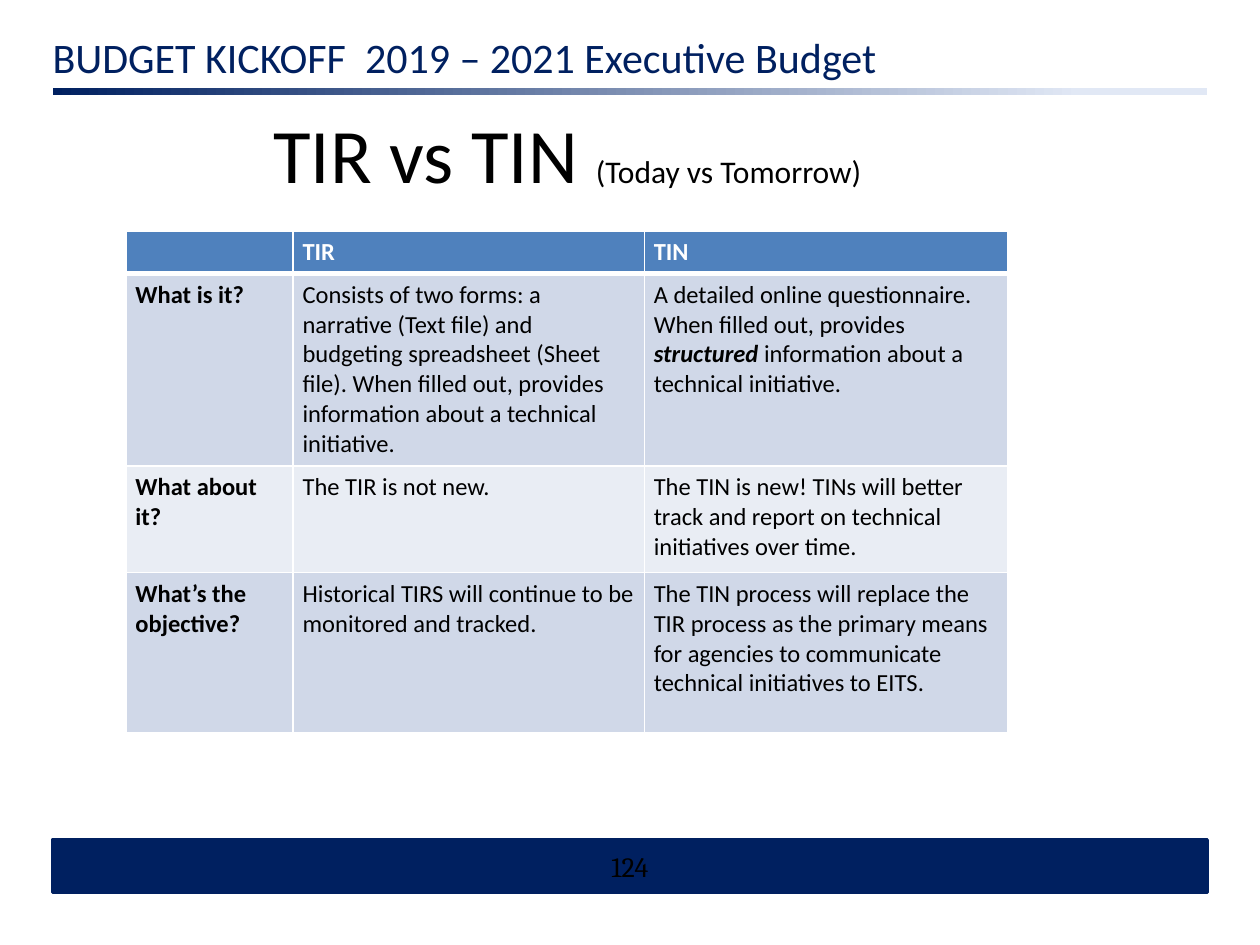
from dataclasses import dataclass

from lxml import etree
from pptx import Presentation
from pptx import util as u
from pptx.dml.color import RGBColor
from pptx.enum import shapes, text
from pptx.oxml.ns import qn


@dataclass(frozen=True)
class Theme:
    font: str = "Calibri"
    number_font: str = "Cambria"
    navy: str = "002060"
    pale: str = "E1E8F5"
    header: str = "4F81BD"
    bands: tuple = ("D0D8E8", "E9EDF4")
    white: str = "FFFFFF"
    black: str = "000000"
    banner_size: int = 24
    title_size: int = 44
    small_size: int = 18
    number_size: int = 16
    table_size: int = 14


class SlideBuilder:
    def __init__(self, slide, theme):
        self.slide = slide
        self.theme = theme

    def add_run(self, paragraph, wording, size, color, font=None, bold=False, italic=False):
        run = paragraph.add_run()
        run.text = wording
        run.font.name = font or self.theme.font
        run.font.size = u.Pt(size)
        run.font.bold = bold
        run.font.italic = italic
        run.font.color.rgb = RGBColor.from_string(color)

    def bar(self, left, top, width, height):
        bar = self.slide.shapes.add_shape(
            shapes.MSO_SHAPE.RECTANGLE, u.Cm(left), u.Cm(top), u.Cm(width), u.Cm(height))
        bar.shadow.inherit = False
        return bar

    def solid_bar(self, *box):
        bar = self.bar(*box)
        navy = RGBColor.from_string(self.theme.navy)
        bar.fill.solid()
        bar.fill.fore_color.rgb = navy
        bar.line.color.rgb = navy
        bar.line.width = u.Pt(2)
        return bar

    def fading_bar(self, *box):
        bar = self.bar(*box)
        bar.line.fill.background()
        bar.fill.gradient()
        bar.fill.gradient_angle = 0
        fade = ((0, self.theme.navy), (0.89, self.theme.pale))
        for stop, (position, color) in zip(bar.fill.gradient_stops, fade):
            stop.position = position
            stop.color.rgb = RGBColor.from_string(color)

    def set_line(self, shape, runs, align):
        """Fill a shape with one vertically centred line of (wording, style) runs."""
        frame = shape.text_frame
        frame.word_wrap = True
        frame.vertical_anchor = text.MSO_ANCHOR.MIDDLE
        line = frame.paragraphs[0]
        line.alignment = align
        for wording, style in runs:
            self.add_run(line, wording, **style)

    def text_line(self, left, top, width, height, runs, align=text.PP_ALIGN.LEFT):
        box = self.slide.shapes.add_textbox(u.Cm(left), u.Cm(top), u.Cm(width), u.Cm(height))
        self.set_line(box, runs, align)

    def border(self, cell, side, width):
        line = etree.SubElement(cell._tc.get_or_add_tcPr(), qn(f"a:ln{side}"), w=str(u.Pt(width)))
        fill = etree.SubElement(line, qn("a:solidFill"))
        etree.SubElement(fill, qn("a:srgbClr"), val=self.theme.white)

    def cell(self, cell, runs, row, column):
        theme = self.theme
        cell.margin_left = cell.margin_right = u.Cm(0.19)
        cell.margin_top = cell.margin_bottom = u.Cm(0.13)
        thick_below_header = {"T": 3 if row == 1 else 1, "B": 3 if row == 0 else 1}
        for side in "LRTB":
            self.border(cell, side, thick_below_header.get(side, 1))
        cell.fill.solid()
        cell.fill.fore_color.rgb = RGBColor.from_string(
            theme.bands[(row - 1) % 2] if row else theme.header)
        paragraph = cell.text_frame.paragraphs[0]
        for wording, emphasis in runs:
            self.add_run(paragraph, wording, theme.table_size,
                         theme.black if row else theme.white,
                         bold=emphasis or row == 0 or column == 0, italic=emphasis)
        if not runs:
            etree.SubElement(paragraph._p, qn("a:endParaRPr"), sz=str(theme.table_size * 100))

    def table(self, left, top, widths, heights, rows):
        """Each cell is a string, or a list of (wording, emphasis) pairs."""
        table = self.slide.shapes.add_table(
            len(heights), len(widths), u.Cm(left), u.Cm(top),
            u.Cm(sum(widths)), u.Cm(sum(heights))).table
        for column, width in zip(table.columns, widths):
            column.width = u.Cm(width)
        for row, height in zip(table.rows, heights):
            row.height = u.Cm(height)
        for r, entries in enumerate(rows):
            for c, entry in enumerate(entries):
                if isinstance(entry, str):
                    entry = [(entry, False)] if entry else []
                self.cell(table.cell(r, c), entry, r, c)


COMPARISON = [
    ["", "TIR", "TIN"],
    ["What is it?",
     "Consists of two forms: a narrative (Text file) and budgeting spreadsheet (Sheet file). "
     "When filled out, provides information about a technical initiative.",
     [("A detailed online questionnaire. When filled out, provides ", False),
      ("structured ", True),
      ("information about a technical initiative.", False)]],
    ["What about it?",
     "The TIR is not new.",
     "The TIN is new! TINs will better track and report on technical initiatives over time."],
    ["What’s the objective?",
     "Historical TIRS will continue to be monitored and tracked.",
     "The TIN process will replace the TIR process as the primary means for agencies to "
     "communicate technical initiatives to EITS."],
]


def main():
    deck = Presentation()
    deck.slide_width, deck.slide_height = u.Cm(25.4), u.Cm(19.05)
    theme = Theme()
    builder = SlideBuilder(deck.slides.add_slide(deck.slide_layouts[6]), theme)

    footer = builder.solid_bar(1.06, 16.93, 23.28, 1.06)
    builder.set_line(footer, [("124", dict(size=theme.number_size, color=theme.black,
                                           font=theme.number_font))], text.PP_ALIGN.CENTER)
    builder.fading_bar(1.06, 1.78, 23.28, 0.13)
    builder.text_line(0.81, 0.64, 23.55, 1.02, [
        ("BUDGET KICKOFF  2019 – 2021 Executive Budget",
         dict(size=theme.banner_size, color=theme.navy))])
    builder.text_line(2.38, 1.6, 18.12, 2.96, [
        ("TIR vs TIN ", dict(size=theme.title_size, color=theme.black)),
        ("(Today vs Tomorrow)", dict(size=theme.small_size, color=theme.black))],
        text.PP_ALIGN.CENTER)
    builder.table(2.54, 4.66, (3.37, 7.08, 7.33), (0.84, 3.88, 2.15, 3.23), COMPARISON)

    deck.save("out.pptx")


if __name__ == "__main__":
    main()
